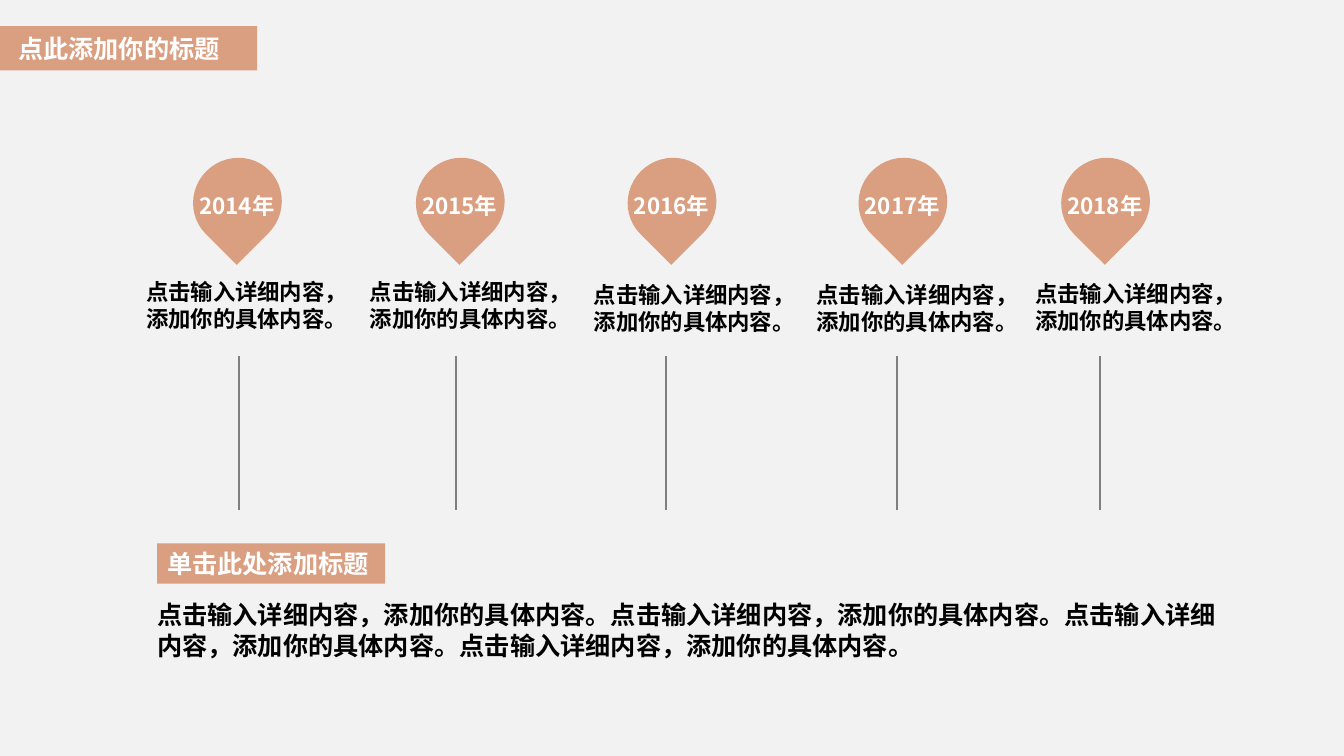
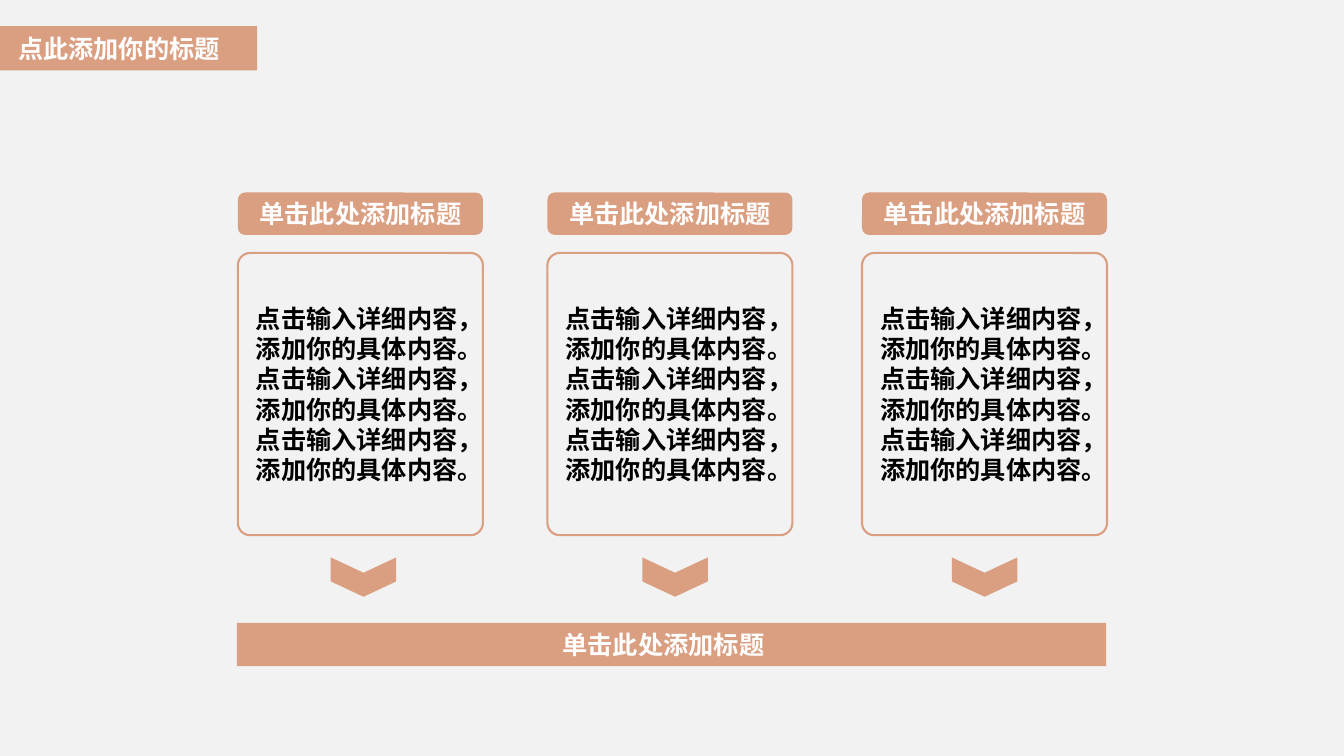
import pptx
import pptx.util
import pptx.dml.color
import pptx.enum.shapes
import pptx.enum.text
import pptx.oxml.ns
from lxml import etree

Inches = pptx.util.Inches
SHAPE = pptx.enum.shapes.MSO_SHAPE
ALIGN = pptx.enum.text.PP_ALIGN
ANCHOR = pptx.enum.text.MSO_ANCHOR
qn = pptx.oxml.ns.qn

FONT = "Noto Sans CJK JP"
CLAY, PAPER, GREY = "DA9E80", "F2F2F2", "808080"
WHITE, BLACK = "FFFFFF", "000000"
TITLE = "点此添加你的标题"
LABEL = "单击此处添加标题"
BODY = "点击输入详细内容，添加你的具体内容。"

# year, pin left, offsets from the pin of its line and text, text top
STOPS = [
    ("2014年", 1.91, 0.46, -0.56, 2.71),
    ("2015年", 4.12, 0.4, -0.55, 2.71),
    ("2016年", 6.22, 0.39, -0.43, 2.74),
    ("2017年", 8.51, 0.39, -0.51, 2.74),
    ("2018年", 10.52, 0.39, -0.35, 2.73),
]
# card left, offset of the arrow below it
CARDS = [(2.36, 1.05), (5.43, 1.07), (8.55, 1.02)]


def color(code):
    return pptx.dml.color.RGBColor.from_string(code)


def write(item, text, size=18, ink=BLACK, align=ALIGN.LEFT,
          anchor=ANCHOR.TOP, left=0.1, right=0.1):
    """Put bold text into a shape or text box."""
    frame = item.text_frame
    frame.word_wrap = True
    frame.vertical_anchor = anchor
    frame.margin_left, frame.margin_right = Inches(left), Inches(right)
    para = frame.paragraphs[0]
    para.alignment = align
    run = para.add_run()
    run.text = text
    font = run.font
    font.name, font.size, font.bold = FONT, pptx.util.Pt(size), True
    font.color.rgb = color(ink)
    east = etree.SubElement(run._r.get_or_add_rPr(), qn("a:ea"))
    east.set("typeface", FONT)


def note(slide, box, text, **style):
    """Add a text box."""
    write(slide.shapes.add_textbox(*map(Inches, box)), text, **style)


def block(slide, kind, box, fill=CLAY, line=None, round=None, turn=0):
    """Add a flat preset shape; round is its first adjustment."""
    item = slide.shapes.add_shape(kind, *map(Inches, box))
    item.shadow.inherit = False
    item.rotation = turn
    if fill:
        item.fill.solid()
        item.fill.fore_color.rgb = color(fill)
    else:
        item.fill.background()
    if line:
        item.line.color.rgb = color(line)
        item.line.width = pptx.util.Pt(1.5)
    else:
        item.line.fill.background()
    if round is not None:
        item.adjustments[0] = round
    return item


def label(slide, kind, box, text, **style):
    """Add a filled shape with white text in its middle."""
    write(block(slide, kind, box), text, ink=WHITE, anchor=ANCHOR.MIDDLE,
          **style)


def rule(slide, x, top, end):
    """Add a vertical line."""
    line = slide.shapes.add_connector(
        pptx.enum.shapes.MSO_CONNECTOR.STRAIGHT,
        Inches(x), Inches(top), Inches(x), Inches(end))
    line.line.color.rgb = color(GREY)
    line.line.width = pptx.util.Pt(1.5)
    etree.SubElement(line._element.spPr, qn("a:effectLst"))


def page(deck):
    """Add a slide with the shared background and title band."""
    slide = deck.slides.add_slide(deck.slide_layouts[6])
    slide.background.fill.solid()
    slide.background.fill.fore_color.rgb = color(PAPER)
    label(slide, SHAPE.RECTANGLE, (0, 0.26, 2.55, 0.44), TITLE, left=0.18)
    return slide


def stop(slide, left, top, year, stem, shift, low):
    """Add one year: pin, text and line."""
    rule(slide, left + stem, top + 1.96, top + 3.49)
    block(slide, SHAPE.TEAR, (left, top, 0.89, 0.87), turn=135)
    note(slide, (left - 0.08, top + 0.29, 1.04, 0.37), year, size=16,
         ink=WHITE, align=ALIGN.CENTER)
    note(slide, (left + shift, low, 2.01, 0.64), BODY, size=16)


def card(slide, left, top, shift):
    """Add one column: heading, framed text and arrow."""
    wide = 2.43
    label(slide, SHAPE.ROUNDED_RECTANGLE, (left, top, wide, 0.42), LABEL,
          align=ALIGN.CENTER)
    block(slide, SHAPE.ROUNDED_RECTANGLE, (left, top + 0.6, wide, 2.8),
          fill=None, line=CLAY, round=0.05)
    note(slide, (left + 0.08, top + 1.05, 2.24, 1.92), BODY * 3)
    block(slide, SHAPE.CHEVRON, (left + shift, top + 3.49, 0.39, 0.65),
          round=0.39, turn=90)


def years(deck):
    slide = page(deck)
    for year, left, stem, shift, low in STOPS:
        stop(slide, left, 1.57, year, stem, shift, low)
    label(slide, SHAPE.RECTANGLE, (1.56, 5.39, 2.26, 0.4), LABEL)
    note(slide, (1.46, 5.9, 10.72, 0.71), BODY * 4)


def columns(deck):
    slide = page(deck)
    for left, shift in CARDS:
        card(slide, left, 1.91, shift)
    label(slide, SHAPE.RECTANGLE, (2.35, 6.18, 8.62, 0.43), LABEL,
          align=ALIGN.CENTER, right=0.26)


def main():
    deck = pptx.Presentation()
    deck.slide_width, deck.slide_height = Inches(13.33), Inches(7.5)
    years(deck)
    columns(deck)
    deck.save("out.pptx")


if __name__ == "__main__":
    main()
